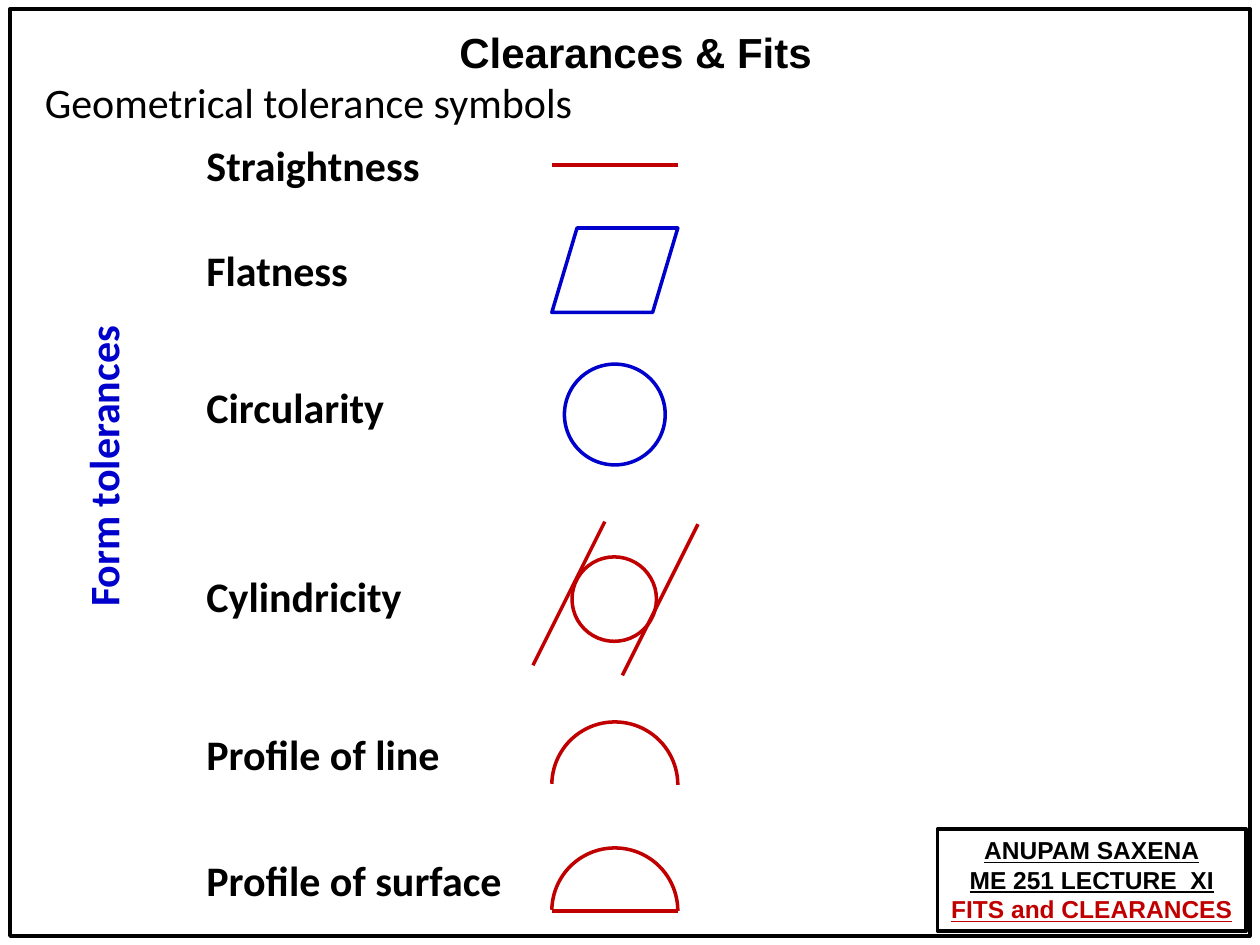
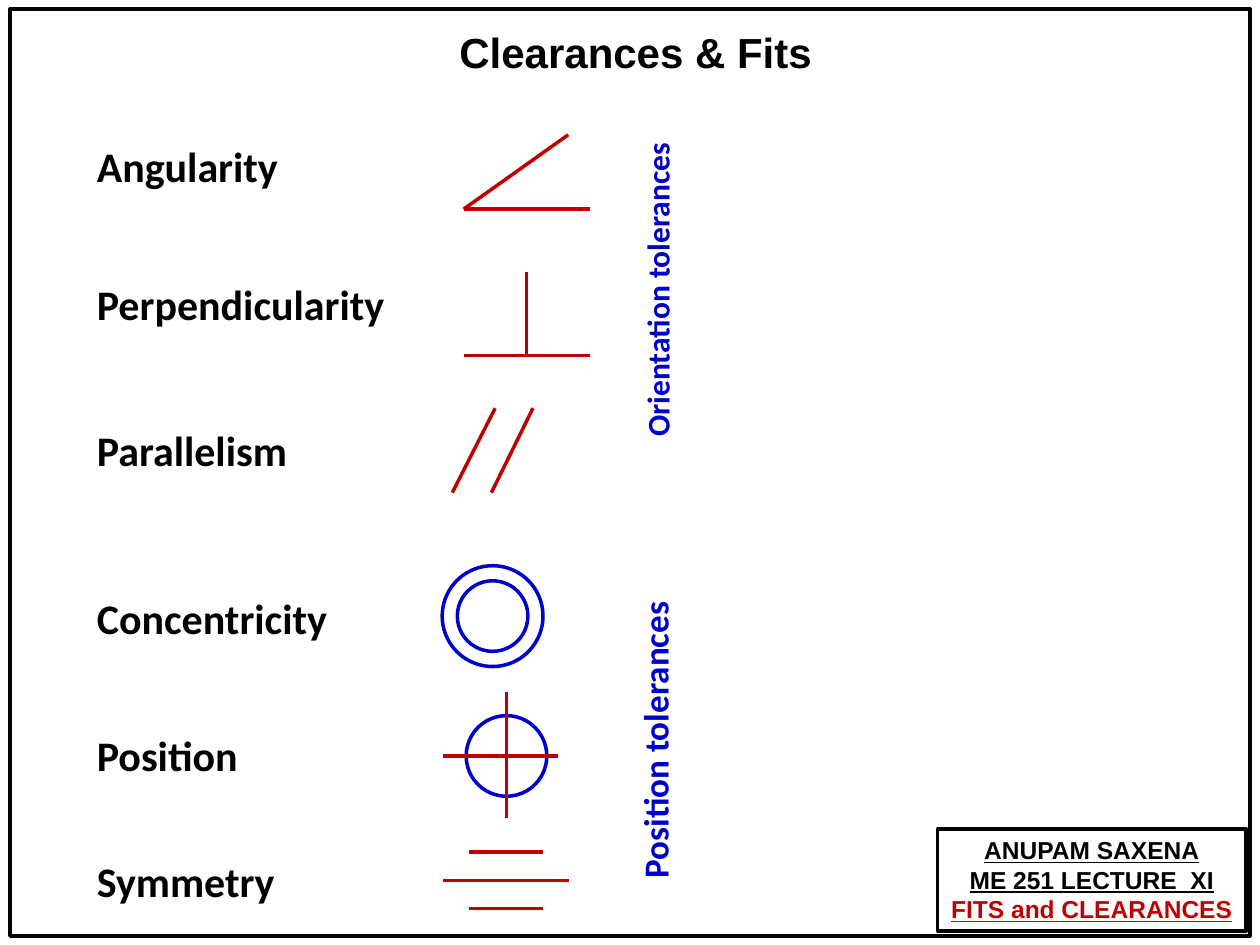
from lxml import etree
from pptx import Presentation
from pptx.dml.color import RGBColor
from pptx.enum.shapes import MSO_CONNECTOR, MSO_SHAPE as SHAPE
from pptx.enum.text import MSO_ANCHOR, MSO_AUTO_SIZE, PP_ALIGN
from pptx.oxml.ns import qn
from pptx.util import Inches, Pt

BLACK = RGBColor(0x00, 0x00, 0x00)
RED = RGBColor(0xC0, 0x00, 0x00)
BLUE = RGBColor(0x00, 0x00, 0xCC)
HEADING_FONT = "Arial"
BODY_FONT = "Calibri"
LINE_WIDTH = Pt(2)
TEXT_HEIGHT = 0.5


def add_outline(slide, kind, color, left, top, width, height):
    outline = slide.shapes.add_shape(
        kind, Inches(left), Inches(top), Inches(width), Inches(height))
    outline.shadow.inherit = False
    outline.fill.background()
    outline.line.color.rgb = color
    outline.line.width = LINE_WIDTH
    return outline


def write(shape, lines, size, font, color=BLACK, bold=True, align=PP_ALIGN.LEFT):
    """Fill a shape with unwrapped lines of text in one style."""
    frame = shape.text_frame
    frame.text = "\n".join(lines)
    frame.word_wrap = False
    frame.auto_size = MSO_AUTO_SIZE.SHAPE_TO_FIT_TEXT
    frame.vertical_anchor = MSO_ANCHOR.TOP
    for paragraph in frame.paragraphs:
        paragraph.alignment = align
        for run in paragraph.runs:
            run.font.size = Pt(size)
            run.font.name = font
            run.font.bold = bold
            run.font.color.rgb = color


prs = Presentation()
prs.slide_width = Inches(10)
prs.slide_height = Inches(7.5)
layout = prs.slide_layouts[5]
form_slide = prs.slides.add_slide(layout)
relation_slide = prs.slides.add_slide(layout)

# Shared heading, frame and lecture box: drawn once, then moved to the layout
heading = form_slide.shapes.add_textbox(
    Inches(3.53), Inches(0.16), Inches(3.03), Inches(TEXT_HEIGHT))
write(heading, ["Clearances & Fits"], 24, HEADING_FONT, align=PP_ALIGN.CENTER)

frame_border = add_outline(form_slide, SHAPE.RECTANGLE, BLACK, 0.08, 0.07, 9.84, 7.36)

lecture_box = add_outline(form_slide, SHAPE.RECTANGLE, BLACK, 7.44, 6.58, 2.45, 0.81)
write(lecture_box, ["ANUPAM SAXENA", "ME 251 LECTURE  XI", "FITS and CLEARANCES"],
      14, HEADING_FONT, align=PP_ALIGN.CENTER)
for paragraph in lecture_box.text_frame.paragraphs:
    paragraph.runs[0].font.underline = True
lecture_box.text_frame.paragraphs[-1].runs[0].font.color.rgb = RED

for shared_part in (heading, frame_border, lecture_box):
    layout.shapes.element.append(shared_part.element)

# Only the first slide has a subtitle
subtitle = form_slide.shapes.title
subtitle.left, subtitle.top = Inches(0.16), Inches(0.46)
subtitle.width, subtitle.height = Inches(4.58), Inches(0.7)
write(subtitle, ["Geometrical tolerance symbols"], 24, BODY_FONT,
      bold=False, align=PP_ALIGN.CENTER)
subtitle.text_frame.word_wrap = True
subtitle.text_frame.auto_size = MSO_AUTO_SIZE.NONE
subtitle.text_frame.vertical_anchor = MSO_ANCHOR.MIDDLE
unused_title = relation_slide.shapes.title.element
unused_title.getparent().remove(unused_title)

# Tolerance names: (text, top, width), in one column per slide
name_columns = [
    (form_slide, 1.54, [
        ("Straightness", 1.06, 1.91),
        ("Flatness", 1.89, 1.34),
        ("Circularity", 2.98, 1.63),
        ("Cylindricity", 4.48, 1.77),
        ("Profile of line", 5.73, 2.07),
        ("Profile of surface", 6.73, 2.57),
    ]),
    (relation_slide, 0.67, [
        ("Angularity", 1.07, 1.65),
        ("Perpendicularity", 2.16, 2.51),
        ("Parallelism", 3.32, 1.73),
        ("Concentricity", 4.65, 2.05),
        ("Position", 5.74, 1.33),
        ("Symmetry", 6.74, 1.63),
    ]),
]
for slide, left, names in name_columns:
    for name, top, width in names:
        label = slide.shapes.add_textbox(
            Inches(left), Inches(top), Inches(width), Inches(TEXT_HEIGHT))
        write(label, [name], 24, BODY_FONT)

# Closed symbols: (slide, shape, colour, left, top, width, height)
closed_symbols = [
    (form_slide, SHAPE.FLOWCHART_DATA, BLUE, 4.38, 1.81, 1, 0.67),  # flatness
    (form_slide, SHAPE.OVAL, BLUE, 4.48, 2.89, 0.8, 0.8),           # circularity
    (form_slide, SHAPE.OVAL, RED, 4.54, 4.42, 0.67, 0.67),          # cylindricity
    (relation_slide, SHAPE.OVAL, BLUE, 3.51, 4.49, 0.8, 0.8),       # concentricity
    (relation_slide, SHAPE.OVAL, BLUE, 3.63, 4.61, 0.56, 0.56),
    (relation_slide, SHAPE.OVAL, BLUE, 3.7, 5.68, 0.64, 0.64),      # position
]
for symbol in closed_symbols:
    add_outline(*symbol)

# Half circles for profile of line and profile of surface
for top in (5.73, 6.73):
    profile = add_outline(form_slide, SHAPE.ARC, RED, 4.38, top, 1, 1)
    profile.adjustments[0] = 108.61
    profile.adjustments[1] = 0

# Straight strokes: (x1, y1, x2, y2)
strokes = [
    (form_slide, [
        (4.38, 1.31, 5.38, 1.31),  # straightness
        (4.23, 5.28, 4.8, 4.14),   # cylindricity
        (4.94, 5.36, 5.54, 4.16),
        (4.38, 7.23, 5.38, 7.23),  # profile of surface
    ]),
    (relation_slide, [
        (3.68, 1.66, 4.68, 1.66),  # angularity
        (3.68, 1.66, 4.51, 1.07),
        (3.68, 2.82, 4.68, 2.82),  # perpendicularity
        (4.18, 2.16, 4.18, 2.82),
        (3.59, 3.91, 3.93, 3.24),  # parallelism
        (3.9, 3.91, 4.23, 3.24),
        (3.52, 6, 4.43, 6),        # position
        (4.02, 5.49, 4.02, 6.49),
        (3.52, 6.99, 4.52, 6.99),  # symmetry
        (3.72, 6.76, 4.31, 6.76),
        (3.72, 7.21, 4.31, 7.21),
    ]),
]
for slide, ends in strokes:
    for points in ends:
        stroke = slide.shapes.add_connector(
            MSO_CONNECTOR.STRAIGHT, *(Inches(point) for point in points))
        stroke.line.color.rgb = RED
        stroke.line.width = LINE_WIDTH
        etree.SubElement(stroke.element.spPr, qn("a:effectLst"))

# Tolerance groups, reading upwards: (slide, text, size, left, top, width, height)
groups = [
    (form_slide, "Form tolerances", 24, -0.41, 3.44, 2.45, 0.5),
    (relation_slide, "Orientation tolerances", 18, 3.94, 2.09, 2.55, 0.4),
    (relation_slide, "Position tolerances", 20, 3.99, 5.64, 2.42, 0.44),
]
for slide, text, size, *box in groups:
    group_name = slide.shapes.add_textbox(*(Inches(length) for length in box))
    group_name.rotation = 270
    write(group_name, [text], size, BODY_FONT, BLUE)

prs.save("out.pptx")
